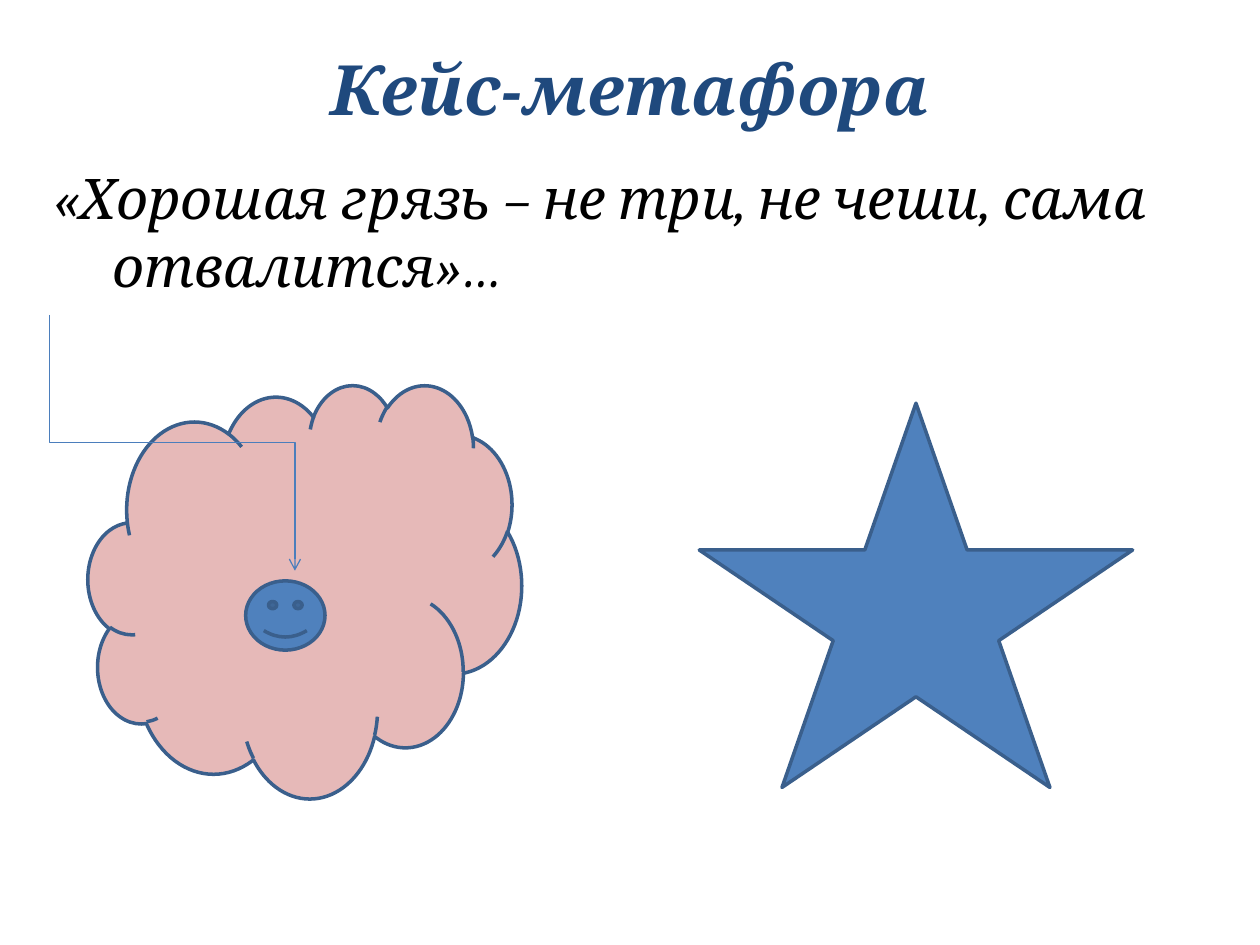
from dataclasses import dataclass

from lxml.etree import SubElement
from pptx import Presentation
from pptx.dml.color import RGBColor
from pptx.enum.shapes import MSO_CONNECTOR, MSO_SHAPE
from pptx.enum.text import MSO_ANCHOR, PP_ALIGN
from pptx.oxml.ns import qn
from pptx.util import Pt

PX = 9144  # EMU; 100 px to the inch


@dataclass(frozen=True)
class Theme:
    font: str = "Cambria"
    title_color: RGBColor = RGBColor(0x1F, 0x49, 0x7D)
    text_color: RGBColor = RGBColor(0, 0, 0)
    cloud_fill: RGBColor = RGBColor(0xE6, 0xB9, 0xB8)
    blue_fill: RGBColor = RGBColor(0x4F, 0x81, 0xBD)
    outline: RGBColor = RGBColor(0x3A, 0x5F, 0x8C)
    arrow: RGBColor = RGBColor(0x4B, 0x7E, 0xBC)
    title_size: float = 39.6
    body_size: float = 32
    outline_width: float = 2
    arrow_width: float = 0.75


THEME = Theme()


def place(shape, box):
    for name, value in zip(("left", "top", "width", "height"), box):
        setattr(shape, name, value * PX)


def add_run(paragraph, text, color, **formats):
    run = paragraph.add_run()
    run.text = text
    for name, value in {"name": THEME.font, "italic": True, **formats}.items():
        setattr(run.font, name, value)
    run.font.color.rgb = color


def fill_title(title, box, text):
    place(title, box)
    title.text_frame.vertical_anchor = MSO_ANCHOR.MIDDLE
    paragraph = title.text_frame.paragraphs[0]
    paragraph.alignment = PP_ALIGN.CENTER
    add_run(paragraph, text, THEME.title_color, size=Pt(THEME.title_size), bold=True)


def fill_quote(body, box, text):
    """Write the quote with a hanging indent and no bullet."""
    place(body, box)
    paragraph = body.text_frame.paragraphs[0]
    properties = paragraph._p.get_or_add_pPr()
    indent = 56 * PX
    properties.set("marL", str(indent))
    properties.set("indent", str(-indent))
    SubElement(properties, qn("a:buNone"))
    size = Pt(THEME.body_size)
    add_run(paragraph, " ", THEME.text_color, size=size, bold=True)
    add_run(paragraph, text, THEME.text_color, size=size, bold=False)


def add_figure(slide, kind, box, fill):
    shape = slide.shapes.add_shape(kind, *(value * PX for value in box))
    shape.shadow.inherit = False
    shape.fill.solid()
    shape.fill.fore_color.rgb = fill
    shape.line.color.rgb = THEME.outline
    shape.line.width = Pt(THEME.outline_width)


def add_bent_arrow(slide, box):
    """Step down, right and down again from the box's top left to its bottom right."""
    left, top, width, height = box
    # The elbow runs sideways by nature: swap its sides about the centre, then turn it.
    x = left + (width - height) // 2
    y = top + (height - width) // 2
    ends = (x + height, y, x, y + width)
    connector = slide.shapes.add_connector(
        MSO_CONNECTOR.ELBOW, *(value * PX for value in ends))
    connector.line.color.rgb = THEME.arrow
    connector.line.width = Pt(THEME.arrow_width)
    properties = connector._element.spPr
    properties.find(qn("a:xfrm")).set("rot", str(270 * 60000))
    SubElement(connector.line._get_or_add_ln(), qn("a:tailEnd"), type="arrow")
    SubElement(properties, qn("a:effectLst"))


def draw_metaphor(slide, box):
    """Place the cloud with its face and arrow on the left, and the star on the right."""
    left, top, _, _ = box
    add_figure(slide, MSO_SHAPE.CLOUD, (left + 31, top + 55, 344, 328), THEME.cloud_fill)
    add_figure(slide, MSO_SHAPE.STAR_5_POINT, (left + 516, top + 70, 344, 305), THEME.blue_fill)
    add_bent_arrow(slide, (left, top, 195, 203))
    add_figure(slide, MSO_SHAPE.SMILEY_FACE, (left + 156, top + 211, 63, 55), THEME.blue_fill)


def main():
    presentation = Presentation()
    presentation.slide_width = 1000 * PX
    presentation.slide_height = 750 * PX
    slide = presentation.slides.add_slide(presentation.slide_layouts[1])
    fill_title(slide.shapes.title, (50, 30, 900, 79), "Кейс-метафора")
    fill_quote(slide.placeholders[1], (23, 125, 953, 594),
               "«Хорошая грязь – не три, не чеши, сама отвалится»…")
    draw_metaphor(slide, (39, 250, 860, 383))
    presentation.save("out.pptx")


if __name__ == "__main__":
    main()
